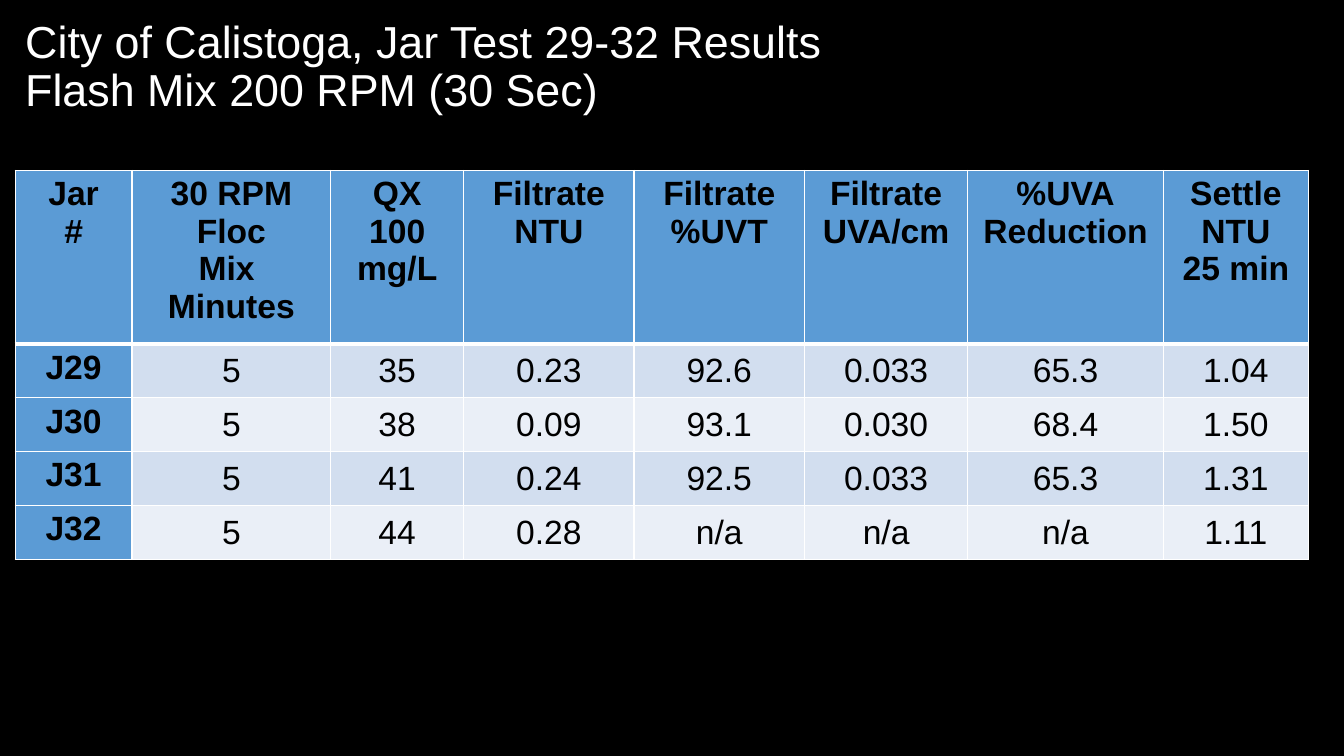
from lxml.etree import SubElement
from pptx import Presentation
from pptx.dml.color import RGBColor
from pptx.enum.text import MSO_ANCHOR as Anchor, PP_ALIGN as Align
from pptx.oxml.ns import qn
from pptx.util import Inches, Pt

BLACK = RGBColor(0x00, 0x00, 0x00)
WHITE = RGBColor(0xFF, 0xFF, 0xFF)
BLUE = RGBColor(0x5B, 0x9B, 0xD5)
BAND_DARK = RGBColor(0xD2, 0xDE, 0xEF)
BAND_LIGHT = RGBColor(0xEA, 0xEF, 0xF7)

MARGIN = 0.15
COLUMN_WIDTHS = [1.16, 1.97, 1.32, 1.69, 1.69, 1.62, 1.94, 1.44]
HEADER_HEIGHT, ROW_HEIGHT = 1.72, 0.535

TITLE = ["City of Calistoga, Jar Test 29-32 Results", "Flash Mix 200 RPM (30 Sec)"]
HEADERS = [
    ["Jar", "#"],
    ["30 RPM", "Floc", "Mix ", "Minutes"],
    ["QX", "100", "mg/L"],
    ["Filtrate", "NTU"],
    ["Filtrate", "%UVT"],
    ["Filtrate", "UVA/cm"],
    ["%UVA", "Reduction"],
    ["Settle", "NTU", "25 min"],
]
RESULTS = [
    ["J29", "5", "35", "0.23", "92.6", "0.033", "65.3", "1.04"],
    ["J30", "5", "38", "0.09", "93.1", "0.030", "68.4", "1.50"],
    ["J31", "5", "41", "0.24", "92.5", "0.033", "65.3", "1.31"],
    ["J32", "5", "44", "0.28", "n/a", "n/a", "n/a", "1.11"],
]


def add_span(para, text, size, color, bold=False):
    span = para.add_run()
    span.text = text
    span.font.name = "Arial"
    span.font.size = Pt(size)
    span.font.bold = bold
    span.font.color.rgb = color


def add_border(cell, side, points):
    line = SubElement(cell._tc.get_or_add_tcPr(), qn(f"a:{side}"), w=str(Pt(points)))
    paint = SubElement(line, qn("a:solidFill"))
    SubElement(paint, qn("a:srgbClr"), val=str(WHITE))


deck = Presentation()
deck.slide_width, deck.slide_height = Inches(13.33), Inches(7.5)
page = deck.slides.add_slide(deck.slide_layouts.get_by_name("Title Only"))
page.background.fill.solid()
page.background.fill.fore_color.rgb = BLACK

title = page.shapes.title
title.left, title.top = Inches(MARGIN), Inches(0.13)
title.width, title.height = Inches(13.02), Inches(1.09)
title.text_frame.word_wrap = True
title.text_frame.vertical_anchor = Anchor.MIDDLE
para = title.text_frame.paragraphs[0]
para.alignment = Align.LEFT
para.line_spacing = 0.9
for number, line in enumerate(TITLE):
    if number:
        para.add_line_break()
    add_span(para, line, 32, WHITE)

rows = [HEADERS] + [[[value] for value in result] for result in RESULTS]
table = page.shapes.add_table(
    len(rows), len(COLUMN_WIDTHS), Inches(MARGIN), Inches(1.69),
    Inches(sum(COLUMN_WIDTHS)), Inches(HEADER_HEIGHT + ROW_HEIGHT * len(RESULTS)),
).table
table.first_col = True
for column, width in zip(table.columns, COLUMN_WIDTHS):
    column.width = Inches(width)

for r, row in enumerate(rows):
    table.rows[r].height = Inches(ROW_HEIGHT if r else HEADER_HEIGHT)
    for c, lines in enumerate(row):
        cell = table.cell(r, c)
        is_heading = r == 0 or c == 0
        if not is_heading:
            cell.vertical_anchor = Anchor.MIDDLE
            cell.margin_left = cell.margin_right = cell.margin_top = Inches(0.01)
            cell.margin_bottom = 0
        for side in ("lnL", "lnR"):
            add_border(cell, side, 1)
        add_border(cell, "lnT", 3 if r == 1 else 1)
        add_border(cell, "lnB", 3 if r == 0 else 1)
        cell.fill.solid()
        band = BAND_DARK if r % 2 else BAND_LIGHT
        cell.fill.fore_color.rgb = BLUE if is_heading else band
        for number, line in enumerate(lines):
            frame = cell.text_frame
            para = frame.add_paragraph() if number else frame.paragraphs[0]
            para.alignment = Align.CENTER
            add_span(para, line, 24, BLACK, is_heading)

deck.save("out.pptx")
